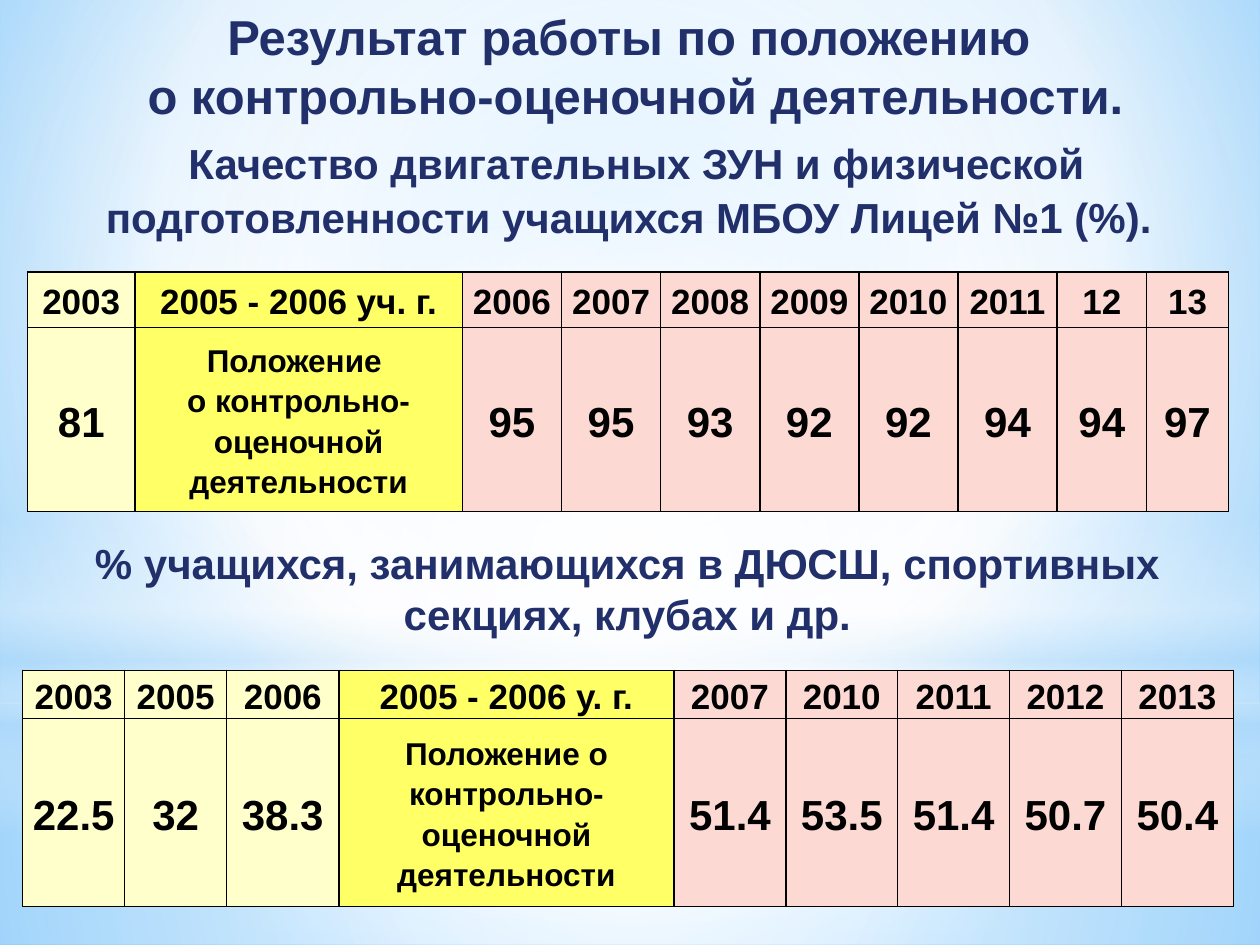
from lxml import etree
from pptx import Presentation, util as u
from pptx.dml.color import RGBColor
from pptx.enum import shapes, text
from pptx.oxml import parse_xml
from pptx.oxml.ns import nsdecls, qn

NAVY, BLACK, WHITE, SKY = "21306A", "000000", "FFFFFF", "B4DCFA"
TINTS = {"before": "FFFFCC", "rule": "FFFF66", "after": "FCD9D3"}
CENTRE = (50, 50, 50, 50)


def tint(code):
    """Turn a hex string into a colour."""
    return RGBColor.from_string(code)


def write(frame, paras, size=24, color=BLACK, lead=None, after=0):
    """Fill a frame with centred paragraphs, each a string or a list of (text, size)."""
    frame.word_wrap = True
    for i, para in enumerate(paras):
        p = frame.add_paragraph() if i else frame.paragraphs[0]
        p.alignment = text.PP_ALIGN.CENTER
        p.space_after = u.Pt(after)
        if lead:
            p.line_spacing = lead
        for words, pts in [(para, size)] if isinstance(para, str) else para:
            run = p.add_run()
            run.text = words
            font = run.font
            font.name, font.size, font.bold = "Arial", u.Pt(pts), True
            font.color.rgb = tint(color)


def blend(fill, host, stops, to=None):
    """Swap the solid fill of a host element for a gradient; no focus means top to bottom."""
    fill.solid()
    marks = "".join(
        f'<a:gs pos="{at * 1000}"><a:srgbClr val="{code}">'
        f'<a:alpha val="{alpha * 1000}"/></a:srgbClr></a:gs>'
        for at, code, alpha in stops)
    if to:
        sides = " ".join(f'{k}="{v * 1000}"' for k, v in zip("ltrb", to))
        mode = f'<a:path path="circle"><a:fillToRect {sides}/></a:path>'
    else:
        mode = '<a:lin ang="5400000" scaled="0"/>'
    old = next(host.iter(qn("a:solidFill")))
    old.getparent().replace(old, parse_xml(
        f'<a:gradFill {nsdecls("a")} rotWithShape="1"><a:gsLst>{marks}</a:gsLst>{mode}</a:gradFill>'))


class Deck:
    """Holds the style and the current slide, on a grid of 100 columns by 75 rows."""

    def __init__(self):
        """Open a title-only slide."""
        self.prs = Presentation()
        self.prs.slide_width, self.prs.slide_height = u.Inches(10), u.Inches(7.5)
        self.unit = self.prs.slide_width / 100
        self.slide = self.prs.slides.add_slide(self.prs.slide_layouts[5])

    def box(self, *cells):
        """Turn grid units into lengths."""
        return [u.Emu(round(c * self.unit)) for c in cells]

    def ground(self, stops, to):
        """Paint the background."""
        blend(self.slide.background.fill, self.slide.element, stops, to)

    def glow(self, kind, place, stops, to=None):
        """Add a soft gradient shape."""
        shape = self.slide.shapes.add_shape(kind, *self.box(*place))
        shape.shadow.inherit = False
        shape.line.fill.background()
        blend(shape.fill, shape.element, stops, to)

    def title(self, place, paras, **fmt):
        """Move the title in front of the glows and fill it."""
        title = self.slide.shapes.title
        title.left, title.top, title.width, title.height = self.box(*place)
        self.slide.shapes.element.append(title.element)
        frame = title.text_frame
        frame.auto_size = text.MSO_AUTO_SIZE.NONE
        frame.vertical_anchor = text.MSO_ANCHOR.TOP
        write(frame, paras, **fmt)

    def label(self, place, paras, **fmt):
        """Add a text box."""
        box = self.slide.shapes.add_textbox(*self.box(*place))
        write(box.text_frame, paras, **fmt)

    def table(self, left, top, rows, cols):
        """Add a table from columns of (width, tint, heading, value, value size)."""
        wide = sum(c[0] for c in cols)
        place = self.box(left, top, wide, sum(rows))
        table = self.slide.shapes.add_table(2, len(cols), *place).table
        table.first_row = table.horz_banding = False
        for row, high in zip(table.rows, self.box(*rows)):
            row.height = high
        for x, (width, hue, head, value, size) in enumerate(cols):
            table.columns[x].width = self.box(width)[0]
            self.cell(table.cell(0, x), head, 20, hue)
            self.cell(table.cell(1, x), value, size, hue)

    def cell(self, cell, words, size, hue):
        """Fill and frame one cell."""
        cell.margin_left = cell.margin_right = self.box(0.7)[0]
        cell.margin_top = cell.margin_bottom = 0
        cell.vertical_anchor = text.MSO_ANCHOR.MIDDLE
        props = cell._tc.get_or_add_tcPr()
        for side in "LRTB":
            line = etree.SubElement(props, qn(f"a:ln{side}"), w=str(u.Pt(1)))
            paint = etree.SubElement(line, qn("a:solidFill"))
            etree.SubElement(paint, qn("a:srgbClr"), val=BLACK)
        cell.fill.solid()
        cell.fill.fore_color.rgb = tint(TINTS[hue])
        write(cell.text_frame, words.split("\n"), size=size, lead=1.15)


def span(hue, width, pairs):
    """List equal columns of one tint."""
    return [(width, hue, head, value, 24) for head, value in pairs]


def main():
    """Build the slide."""
    deck = Deck()
    rect, oval = shapes.MSO_SHAPE.RECTANGLE, shapes.MSO_SHAPE.OVAL
    deck.ground([(0, "9ED5FF", 100), (60, WHITE, 100), (100, "5BB9FF", 100)], (20, 10, 20, 60))
    deck.glow(rect, (0, 55.8, 100, 19.2), [(0, WHITE, 91), (37, WHITE, 76), (100, SKY, 79)], CENTRE)
    deck.glow(rect, (0, 0, 100, 55.8), [(0, WHITE, 89), (48, WHITE, 62), (100, SKY, 79)], CENTRE)
    deck.glow(rect, (0, 41.2, 100, 25), [(0, WHITE, 0), (29, WHITE, 30), (45, SKY, 40),
                                         (55, WHITE, 26), (65, SKY, 60), (100, WHITE, 0)])
    deck.glow(oval, (0, 17.5, 100, 55.8), [(0, WHITE, 100), (56, WHITE, 0)], CENTRE)

    deck.title((0, 0, 99.8, 19.9), [
        "Результат работы по положению",
        " о контрольно-оценочной деятельности.",
        [(" ", 32), ("Качество двигательных ЗУН и физической "
                     "подготовленности учащихся МБОУ Лицей №1 (%).", 24)],
    ], size=28, color=NAVY)
    deck.table(2.2, 21.6, (4.4, 14.6), [
        *span("before", 8.5, [("2003", "81")]),
        (26, "rule", "2005 - 2006 уч. г.", "Положение \nо контрольно-оценочной деятельности", 18),
        *span("after", 7.87, [("2006", "95"), ("2007", "95"), ("2008", "93"),
                              ("2009", "92"), ("2010", "92"), ("2011", "94")]),
        *span("after", 7.1, [("12", "94")]),
        *span("after", 6.5, [("13", "97")]),
    ])

    deck.label((-0.2, 42.2, 100, 9.1), [
        "% учащихся, занимающихся в ДЮСШ, спортивных секциях, клубах и др."],
        color=NAVY, after=10)
    deck.table(1.8, 53.2, (2.7, 14.9), [
        *span("before", 8.1, [("2003", "22.5"), ("2005", "32")]),
        *span("before", 8.9, [("2006", "38.3")]),
        (26.6, "rule", "2005 - 2006 у. г.", "Положение о контрольно-оценочной деятельности", 18),
        *span("after", 8.88, [("2007", "51.4"), ("2010", "53.5"), ("2011", "51.4"),
                              ("2012", "50.7"), ("2013", "50.4")]),
    ])
    deck.prs.save("out.pptx")


if __name__ == "__main__":
    main()
